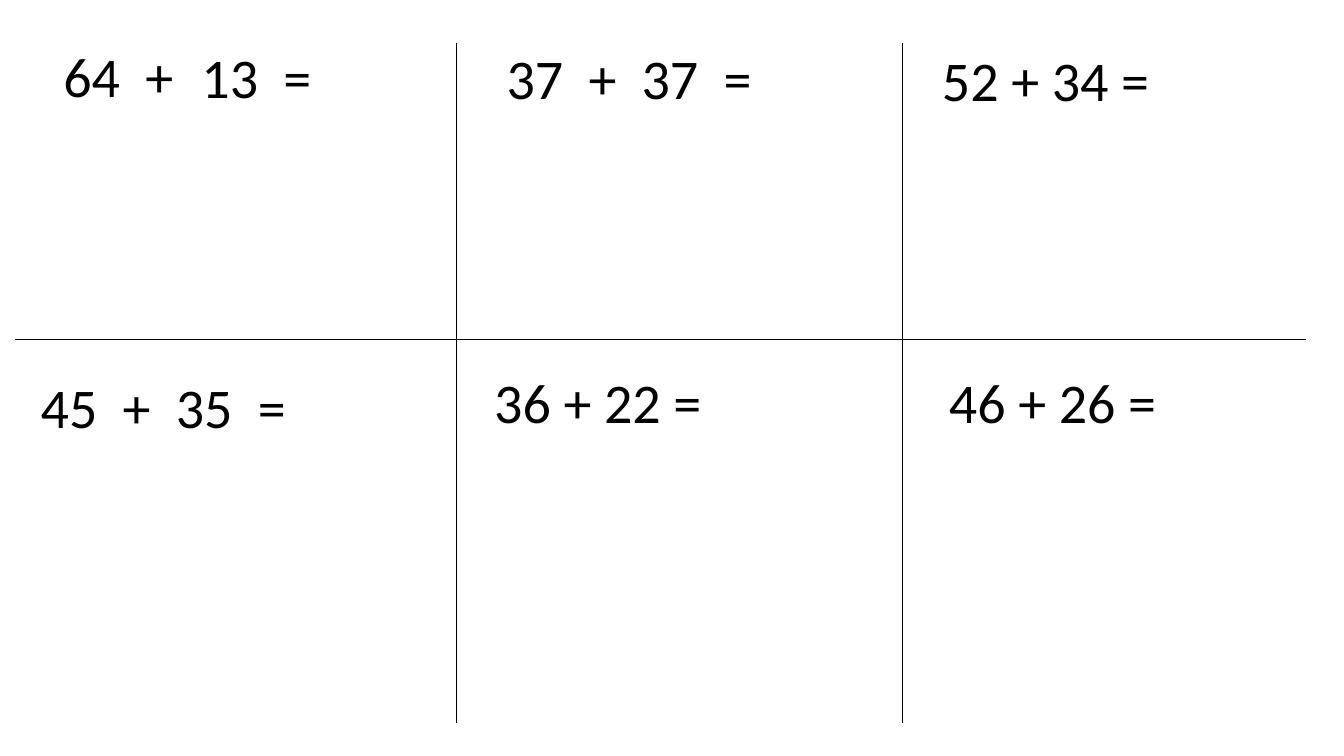
"""Build a worksheet slide with six two-digit additions in a ruled grid."""
import pptx
import pptx.util
import pptx.dml.color
import pptx.enum.shapes
import pptx.enum.text
from lxml import etree
from pptx.util import Inches, Pt

BLACK = pptx.dml.color.RGBColor(0x00, 0x00, 0x00)
LEFT = pptx.enum.text.PP_ALIGN.LEFT
CENTER = pptx.enum.text.PP_ALIGN.CENTER

SUM_WIDTH, SUM_HEIGHT = 3.79, 0.77
LEFT_INSET, ANSWER_INSET = 0.1, 0.35

CENTERED_SUMS = [
    ("37  +  37  =", 4.47, 0.38),
    ("52 + 34 =", 8.6, 0.4),
    ("45  +  35  =", -0.15, 3.65),
    ("36 + 22 =", 4.16, 3.6),
    ("46 + 26 =", 8.67, 3.6),
]
FIRST_SUM_PARTS = [
    ("64  +", 0.53, 0.36, 2.51),
    ("13  =", 1.9, 0.37, 2.28),
]

ROW_RULE, RULE_LEFT, RULE_RIGHT = 3.37, 0.15, 12.95
COLUMN_RULES, RULE_TOP, RULE_BOTTOM = [4.53, 8.95], 0.43, 7.17


def add_sum(slide, wording, left, top, width, alignment, right_inset):
    """Place one sum, or part of one, at the given position."""
    sum_box = slide.shapes.add_textbox(
        Inches(left), Inches(top), Inches(width), Inches(SUM_HEIGHT))
    frame = sum_box.text_frame
    frame.word_wrap = True
    frame.auto_size = pptx.enum.text.MSO_AUTO_SIZE.SHAPE_TO_FIT_TEXT
    frame.margin_left = Inches(LEFT_INSET)
    frame.margin_right = Inches(right_inset)
    paragraph = frame.paragraphs[0]
    paragraph.alignment = alignment
    run = paragraph.add_run()
    run.text = wording
    run.font.name = "Calibri"
    run.font.size = Pt(40)
    run.font.color.rgb = BLACK


def add_rule(slide, *ends):
    """Draw one thin grid line between two points."""
    rule = slide.shapes.add_connector(
        pptx.enum.shapes.MSO_CONNECTOR.STRAIGHT, *map(Inches, ends))
    rule.line.color.rgb = BLACK
    rule.line.width = Pt(0.5)
    etree.SubElement(rule._element.spPr, pptx.oxml.ns.qn("a:effectLst"))


def main():
    """Assemble and save the worksheet."""
    deck = pptx.Presentation()
    deck.slide_width, deck.slide_height = Inches(13.33), Inches(7.5)
    slide = deck.slides.add_slide(deck.slide_layouts[6])

    for wording, left, top, width in FIRST_SUM_PARTS:
        add_sum(slide, wording, left, top, width, LEFT, LEFT_INSET)
    for wording, left, top in CENTERED_SUMS:
        add_sum(slide, wording, left, top, SUM_WIDTH, CENTER, ANSWER_INSET)

    add_rule(slide, RULE_LEFT, ROW_RULE, RULE_RIGHT, ROW_RULE)
    for column in COLUMN_RULES:
        add_rule(slide, column, RULE_TOP, column, RULE_BOTTOM)

    deck.save("out.pptx")


if __name__ == "__main__":
    main()
